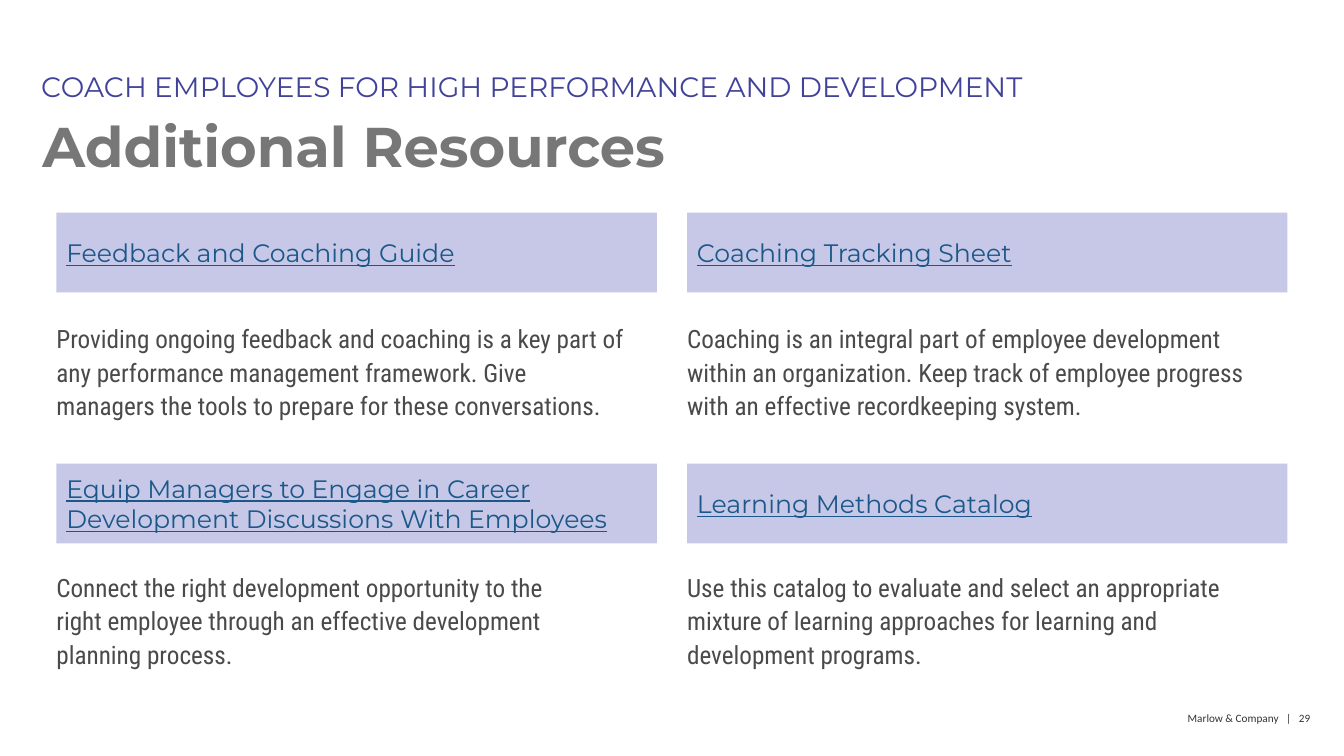
from dataclasses import dataclass

from pptx import Presentation
from pptx.dml.color import RGBColor
from pptx.enum.shapes import MSO_SHAPE
from pptx.enum.text import MSO_ANCHOR, MSO_AUTO_SIZE, PP_ALIGN
from pptx.util import Inches, Pt


@dataclass(frozen=True)
class TextStyle:
    """Holds the look of one kind of text."""

    font: str
    size: int
    color: str
    bold: bool = False
    underline: bool = False
    line_spacing: float = 1.0
    space_before: int = 0
    align: PP_ALIGN = PP_ALIGN.LEFT
    anchor: MSO_ANCHOR = MSO_ANCHOR.TOP
    inset_x: float = 0
    inset_y: float = 0


@dataclass(frozen=True)
class Theme:
    """Keeps the colours and type styles of the deck."""

    band: str = "C7C8E7"
    title: TextStyle = TextStyle("Montserrat", 40, "777777", bold=True, line_spacing=0.9,
                                 inset_x=0.1, inset_y=0.05)
    kicker: TextStyle = TextStyle("Montserrat", 20, "414299", line_spacing=0.9,
                                  inset_x=0.1, inset_y=0.05)
    heading: TextStyle = TextStyle("Montserrat", 18, "1B5889", underline=True,
                                   anchor=MSO_ANCHOR.MIDDLE, inset_x=0.1, inset_y=0.05)
    body: TextStyle = TextStyle("Roboto Condensed", 18, "4A4A4A", line_spacing=1.1,
                                space_before=10)
    footer: TextStyle = TextStyle("Calibri", 8, "333333", line_spacing=1.1,
                                  align=PP_ALIGN.RIGHT)


class PageBuilder:
    """Draws styled elements on the current slide."""

    def __init__(self, page, theme):
        self.page = page
        self.theme = theme

    def fill_text(self, box, text, style):
        frame = box.text_frame
        frame.word_wrap = True
        frame.auto_size = MSO_AUTO_SIZE.NONE
        frame.vertical_anchor = style.anchor
        frame.margin_left = frame.margin_right = Inches(style.inset_x)
        frame.margin_top = frame.margin_bottom = Inches(style.inset_y)
        para = frame.paragraphs[0]
        para.alignment = style.align
        para.line_spacing = style.line_spacing
        para.space_before = Pt(style.space_before)
        span = para.add_run()
        span.text = text
        span.font.name = style.font
        span.font.size = Pt(style.size)
        span.font.bold = style.bold
        span.font.underline = style.underline
        span.font.color.rgb = RGBColor.from_string(style.color)

    def title(self, text, left, top, width, height):
        box = self.page.shapes.title
        box.left, box.top = Inches(left), Inches(top)
        box.width, box.height = Inches(width), Inches(height)
        self.fill_text(box, text, self.theme.title)

    def text(self, text, style, left, top, width, height):
        box = self.page.shapes.add_textbox(
            Inches(left), Inches(top), Inches(width), Inches(height))
        self.fill_text(box, text, style)

    def band(self, text, left, top, width, height):
        box = self.page.shapes.add_shape(
            MSO_SHAPE.RECTANGLE, Inches(left), Inches(top), Inches(width), Inches(height))
        box.shadow.inherit = False
        box.fill.solid()
        box.fill.fore_color.rgb = RGBColor.from_string(self.theme.band)
        box.line.fill.background()
        self.fill_text(box, text, self.theme.heading)


RESOURCES = [
    ("Feedback and Coaching Guide",
     "Providing ongoing feedback and coaching is a key part of any performance management "
     "framework. Give managers the tools to prepare for these conversations.", 5.7),
    ("Coaching Tracking Sheet",
     "Coaching is an integral part of employee development within an organization. Keep track "
     "of employee progress with an effective recordkeeping system.", 5.7),
    ("Equip Managers to Engage in Career Development Discussions With Employees",
     "Connect the right development opportunity to the right employee through an effective "
     "development planning process.", 4.84),
    ("Learning Methods Catalog",
     "Use this catalog to evaluate and select an appropriate mixture of learning approaches "
     "for learning and development programs.", 5.79),
]


def main():
    theme = Theme()
    deck = Presentation()
    deck.slide_width, deck.slide_height = Inches(13.34), Inches(7.5)
    builder = PageBuilder(deck.slides.add_slide(deck.slide_layouts[5]), theme)

    builder.text("COACH EMPLOYEES FOR HIGH PERFORMANCE AND DEVELOPMENT",
                 theme.kicker, 0.31, 0.68, 10.98, 0.4)
    builder.title("Additional Resources", 0.32, 1.13, 12.81, 0.65)

    for index, (heading, description, text_width) in enumerate(RESOURCES):
        row, column = divmod(index, 2)
        left = 0.56 + column * 6.26
        builder.band(heading, left, 2.11 + row * 2.49, 5.96, 0.79)
        builder.text(description, theme.body, left, 3.18 + row * 2.47, text_width, 1.15)

    builder.text("Marlow & Company   |   29", theme.footer, 10.74, 7.04, 2.27, 0.2)
    deck.save("out.pptx")


if __name__ == "__main__":
    main()
